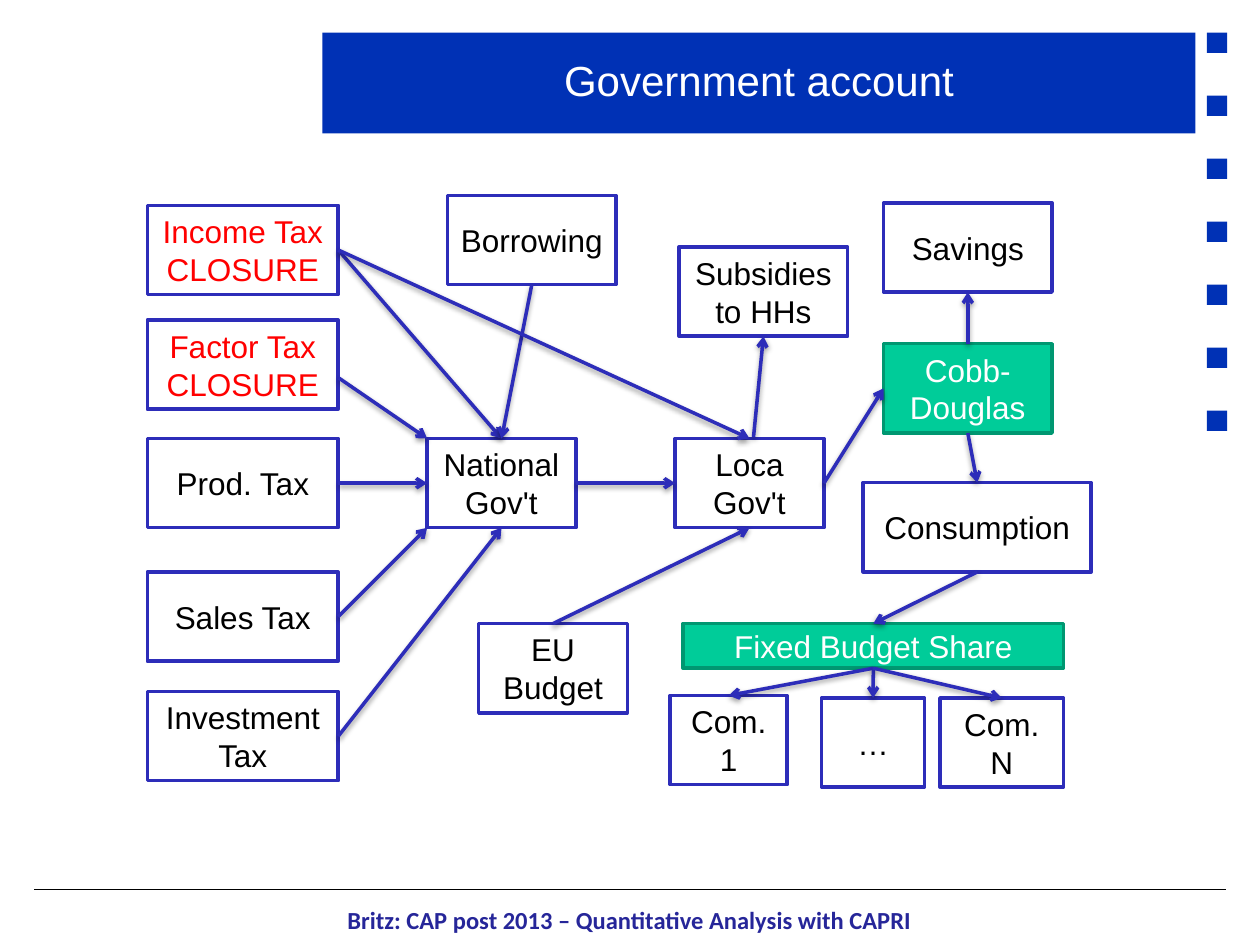
from pptx import Presentation
from pptx.dml.color import RGBColor
from pptx.enum.shapes import MSO_CONNECTOR, MSO_SHAPE
from pptx.enum.text import MSO_ANCHOR, PP_ALIGN
from pptx.oxml import parse_xml
from pptx.oxml.ns import nsdecls
from pptx.util import Cm, Pt

NAVY, BLUE, GREEN, DARK_GREEN = "0031B5", "2D2DB9", "00CC99", "009771"
WHITE, BLACK, RED = "FFFFFF", "000000", "FF0000"
TOP, LEFT, BOTTOM, RIGHT = range(4)
BOX_H = 1.8

SHADOW = (
    f'<a:effectLst {nsdecls("a")}><a:outerShdw blurRad="39370" dist="20320" dir="5400000" rotWithShape="0">'
    '<a:srgbClr val="000000"><a:alpha val="38000"/></a:srgbClr></a:outerShdw></a:effectLst>'
)
NO_EFFECT = f'<a:effectLst {nsdecls("a")}/>'
ARROW = f'<a:tailEnd {nsdecls("a")} type="arrow"/>'


def rgb(value):
    return RGBColor.from_string(value)


class Deck:
    """Draws styled elements on the current slide."""

    label = {"name": "Arial", "size": Pt(18), "bold": False}
    heading = {"name": "Arial", "size": Pt(24), "bold": False}
    footer = {"name": "Calibri", "size": Pt(14), "bold": True}

    def __init__(self, prs):
        self.s = prs.slides.add_slide(prs.slide_layouts[6])

    def add_text(self, sp, text, color, fmt, spacing=None):
        tf = sp.text_frame
        for name, value in {"word_wrap": True, "vertical_anchor": MSO_ANCHOR.MIDDLE}.items():
            setattr(tf, name, value)
        for i, line in enumerate(text.split("\n")):
            p = tf.add_paragraph() if i else tf.paragraphs[0]
            p.alignment = PP_ALIGN.CENTER
            p.line_spacing = spacing
            r = p.add_run()
            r.text = line
            for name, value in fmt.items():
                setattr(r.font, name, value)
            r.font.color.rgb = rgb(color)

    def rect(self, x, y, w, h, fill, line=None):
        sp = self.s.shapes.add_shape(MSO_SHAPE.RECTANGLE, Cm(x), Cm(y), Cm(w), Cm(h))
        sp.shadow.inherit = False
        sp.fill.solid()
        sp.fill.fore_color.rgb = rgb(fill)
        if line:
            sp.line.color.rgb = rgb(line)
            sp.line.width = Pt(2)
        else:
            sp.line.fill.background()
        return sp

    def box(self, text, x, y, w, h=BOX_H, color=BLACK, fill=WHITE, line=BLUE):
        sp = self.rect(x, y, w, h, fill, line)
        self.add_text(sp, text, color, self.label)
        return sp

    def title(self, text, x, y, w, h):
        self.add_text(self.rect(x, y, w, h, NAVY), text, WHITE, self.heading, 0.9)

    def foot(self, text, x, y, w, h):
        sp = self.s.shapes.add_textbox(Cm(x), Cm(y), Cm(w), Cm(h))
        margins = {"margin_left": 0, "margin_top": Cm(0.2), "margin_right": 0, "margin_bottom": 0}
        for name, value in margins.items():
            setattr(sp.text_frame, name, value)
        self.add_text(sp, text, "262699", self.footer)

    def line(self, start, end, color, width, effect):
        points = [Cm(v) for v in (*start, *end)]
        c = self.s.shapes.add_connector(MSO_CONNECTOR.STRAIGHT, *points)
        c.line.color.rgb = rgb(color)
        c.line.width = Pt(width)
        c._element.spPr.append(parse_xml(effect))
        return c

    def arrow(self, start, end):
        """Joins (box, side) pairs; a pair of numbers is a free point."""
        loose = [p if isinstance(p[0], float) else (0, 0) for p in (start, end)]
        c = self.line(*loose, BLUE, 2, SHADOW)
        c.line._get_or_add_ln().append(parse_xml(ARROW))
        for point, join in ((start, c.begin_connect), (end, c.end_connect)):
            if not isinstance(point[0], float):
                join(*point)


def main():
    prs = Presentation()
    prs.slide_width, prs.slide_height = Cm(25.4), Cm(19.05)
    d = Deck(prs)

    d.line((0.69, 17.93), (24.71, 17.93), BLACK, 0.75, NO_EFFECT)
    for i in range(7):
        d.rect(24.33, 0.66 + 1.27 * i, 0.41, 0.41, NAVY)
    d.title("Government account", 6.5, 0.66, 17.6, 2.03)
    d.foot("Britz: CAP post 2013 – Quantitative Analysis with CAPRI", 0.69, 18.14, 24, 0.61)

    taxes = (
        ("Income Tax\nCLOSURE", 4.14, RED),
        ("Factor Tax\nCLOSURE", 6.45, RED),
        ("Prod. Tax", 8.84, BLACK),
        ("Sales Tax", 11.53, BLACK),
        ("Investment Tax", 13.94, BLACK),
    )
    income, factor, prod, sales, investment = [
        d.box(text, 2.97, y, 3.85, color=color) for text, y, color in taxes
    ]
    green = {"color": WHITE, "fill": GREEN, "line": DARK_GREEN}
    national = d.box("National Gov't", 8.61, 8.84, 3)
    local = d.box("Loca\nGov't", 13.61, 8.84, 3)
    eu = d.box("EU Budget", 9.65, 12.57, 3)
    borrowing = d.box("Borrowing", 9.02, 3.94, 3.4)
    subsidies = d.box("Subsidies to HHs", 13.69, 4.98, 3.4)
    savings = d.box("Savings", 17.81, 4.09, 3.4)
    cobb = d.box("Cobb-\nDouglas", 17.81, 6.93, 3.4, **green)
    consumption = d.box("Consumption", 17.4, 9.73, 4.6)
    shares = d.box("Fixed Budget Share", 13.77, 12.57, 7.67, 0.9, **green)
    goods = [
        d.box(text, x, y, w)
        for text, x, y, w in (
            ("Com. 1", 13.51, 14.02, 2.36),
            ("…", 16.56, 14.07, 2.08),
            ("Com. N", 18.95, 14.07, 2.49),
        )
    ]

    flows = [
        ((income, RIGHT), (national, TOP)),
        ((6.83, 7.62), (8.61, 8.84)),
        ((prod, RIGHT), (national, LEFT)),
        ((sales, RIGHT), (8.61, 10.64)),
        ((investment, RIGHT), (national, BOTTOM)),
        ((borrowing, BOTTOM), (national, TOP)),
        ((eu, TOP), (local, BOTTOM)),
        ((national, RIGHT), (local, LEFT)),
        ((income, RIGHT), (local, TOP)),
        ((local, RIGHT), (cobb, LEFT)),
        ((cobb, TOP), (savings, BOTTOM)),
        ((cobb, BOTTOM), (consumption, TOP)),
        ((15.19, 8.81), (subsidies, BOTTOM)),
        ((consumption, BOTTOM), (shares, TOP)),
    ]
    flows += [((shares, BOTTOM), (good, TOP)) for good in goods]
    for start, end in flows:
        d.arrow(start, end)

    prs.save("out.pptx")


if __name__ == "__main__":
    main()
